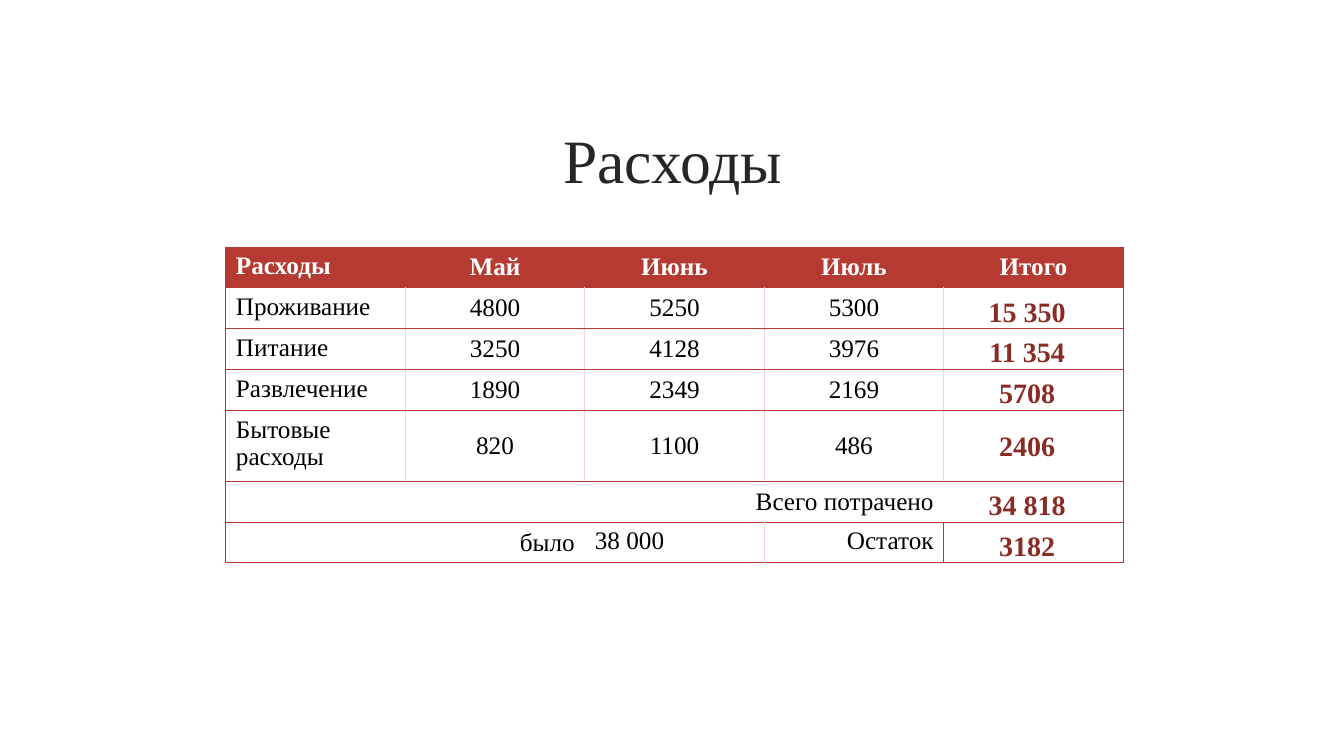
import pptx
import pptx.dml.color
import pptx.enum.text
import pptx.oxml
import pptx.oxml.ns
import pptx.util

RGBColor = pptx.dml.color.RGBColor
Align = pptx.enum.text.PP_ALIGN
Anchor = pptx.enum.text.MSO_ANCHOR

WHITE = RGBColor(0xFF, 0xFF, 0xFF)
BLACK = RGBColor(0x00, 0x00, 0x00)
CHARCOAL = RGBColor(0x26, 0x26, 0x26)
RED = RGBColor(0xB5, 0x3A, 0x31)
PINK = RGBColor(0xF3, 0xD5, 0xD3)
DARK_RED = RGBColor(0x88, 0x2C, 0x25)

EXPENSES = [
    ["Расходы", "Май", "Июнь", "Июль", "Итого"],
    ["Проживание", "4800", "5250", "5300", ""],
    ["Питание", "3250", "4128", "3976", ""],
    ["Развлечение", "1890", "2349", "2169", ""],
    ["Бытовые расходы", "820", "1100", "486", ""],
    ["Всего потрачено", "", "", "", ""],
    ["было", "", "38 000", "Остаток", ""],
]
TOTALS = ["15 350", "11 354", "5708", "2406", "34 818", "3182"]
ROW_HEIGHTS = [1, 1, 1, 1, 1.73, 1, 1]
SPENT, BALANCE = 5, 6
MERGED = {SPENT: 3, BALANCE: 1}
SUMMARY_ALIGN = {
    (SPENT, 0): (Align.RIGHT, Anchor.MIDDLE),
    (BALANCE, 0): (Align.RIGHT, Anchor.MIDDLE),
    (BALANCE, 2): (Align.LEFT, Anchor.TOP),
    (BALANCE, 3): (Align.RIGHT, Anchor.TOP),
}


def edge_color(row, edge):
    if edge in (0, 5):
        return RED
    if 0 < row < SPENT:
        return PINK
    return {(BALANCE, 3): PINK, (BALANCE, 4): RED}.get((row, edge))


def cell_layout(row, column):
    if row >= SPENT:
        return SUMMARY_ALIGN.get((row, column), (Align.CENTER, Anchor.MIDDLE))
    return (Align.CENTER, Anchor.MIDDLE) if column else (Align.LEFT, Anchor.TOP)


class ExpenseSlide:
    """Slide on a grid whose origin is the top left corner of the table."""

    font = "Times New Roman"
    left, top = pptx.util.Inches(2.24), pptx.util.Inches(2.45)
    column, row = pptx.util.Inches(1.78), pptx.util.Cm(1.03)

    def __init__(self, deck):
        self.slide = deck.slides.add_slide(deck.slide_layouts[5])

    def box(self, column, row, columns, rows):
        return (
            int(self.left + column * self.column),
            int(self.top + row * self.row),
            int(columns * self.column),
            int(rows * self.row),
        )

    def set_text(self, frame, text, size, color, align, bold=False):
        frame.text = text
        paragraph = frame.paragraphs[0]
        paragraph.alignment = align
        for run in paragraph.runs:
            run.font.name = self.font
            run.font.size = pptx.util.Pt(size)
            run.font.bold = bold
            run.font.color.rgb = color

    def title(self, text, *area):
        heading = self.slide.shapes.title
        heading.left, heading.top, heading.width, heading.height = self.box(*area)
        heading.text_frame.vertical_anchor = Anchor.MIDDLE
        self.set_text(heading.text_frame, text, 44, CHARCOAL, Align.CENTER)

    def border(self, cell, side, color):
        points = 1 if color == PINK else 0.75
        paint = (
            f'<a:solidFill><a:srgbClr val="{color}"/></a:solidFill>'
            if color else "<a:noFill/>"
        )
        cell._tc.get_or_add_tcPr().append(pptx.oxml.parse_xml(
            f'<a:ln{side} {pptx.oxml.ns.nsdecls("a")} '
            f'w="{pptx.util.Pt(points)}">{paint}</a:ln{side}>'
        ))

    def table(self, values, heights):
        area = self.box(0, 0, len(values[0]), sum(heights))
        table = self.slide.shapes.add_table(len(values), len(values[0]), *area).table
        table.first_row = table.horz_banding = False
        for column in table.columns:
            column.width = self.column
        for r, height in enumerate(heights):
            table.rows[r].height = int(height * self.row)
            for c, text in enumerate(values[r]):
                self.cell(table.cell(r, c), r, c, text)
        for r, last in MERGED.items():
            table.cell(r, 0).merge(table.cell(r, last))

    def cell(self, cell, row, column, text):
        header = row == 0
        align, cell.vertical_anchor = cell_layout(row, column)
        self.set_text(cell.text_frame, text, 18, WHITE if header else BLACK, align, header)
        self.border(cell, "L", edge_color(row, column))
        self.border(cell, "R", edge_color(row, column + 1))
        for side in "TB":
            self.border(cell, side, RED)
        if header:
            cell.fill.solid()
            cell.fill.fore_color.rgb = RED
        else:
            cell.fill.background()

    def total(self, text, row, height):
        offset = max(0.03, (height - 1.09) / 2)
        label = self.slide.shapes.add_textbox(*self.box(4.19, row + offset, 0.55, 1.09))
        frame = label.text_frame
        frame.word_wrap = True
        frame.margin_left = frame.margin_right = 0
        self.set_text(frame, text, 20, DARK_RED, Align.CENTER, True)


def main():
    deck = pptx.Presentation()
    deck.slide_width = pptx.util.Inches(13.33)
    deck.slide_height = pptx.util.Inches(7.5)
    expenses = ExpenseSlide(deck)
    expenses.title("Расходы", -0.46, -3.4, 5.9, 2.47)
    expenses.table(EXPENSES, ROW_HEIGHTS)
    for r, total in enumerate(TOTALS, start=1):
        expenses.total(total, sum(ROW_HEIGHTS[:r]), ROW_HEIGHTS[r])
    deck.save("out.pptx")


if __name__ == "__main__":
    main()
